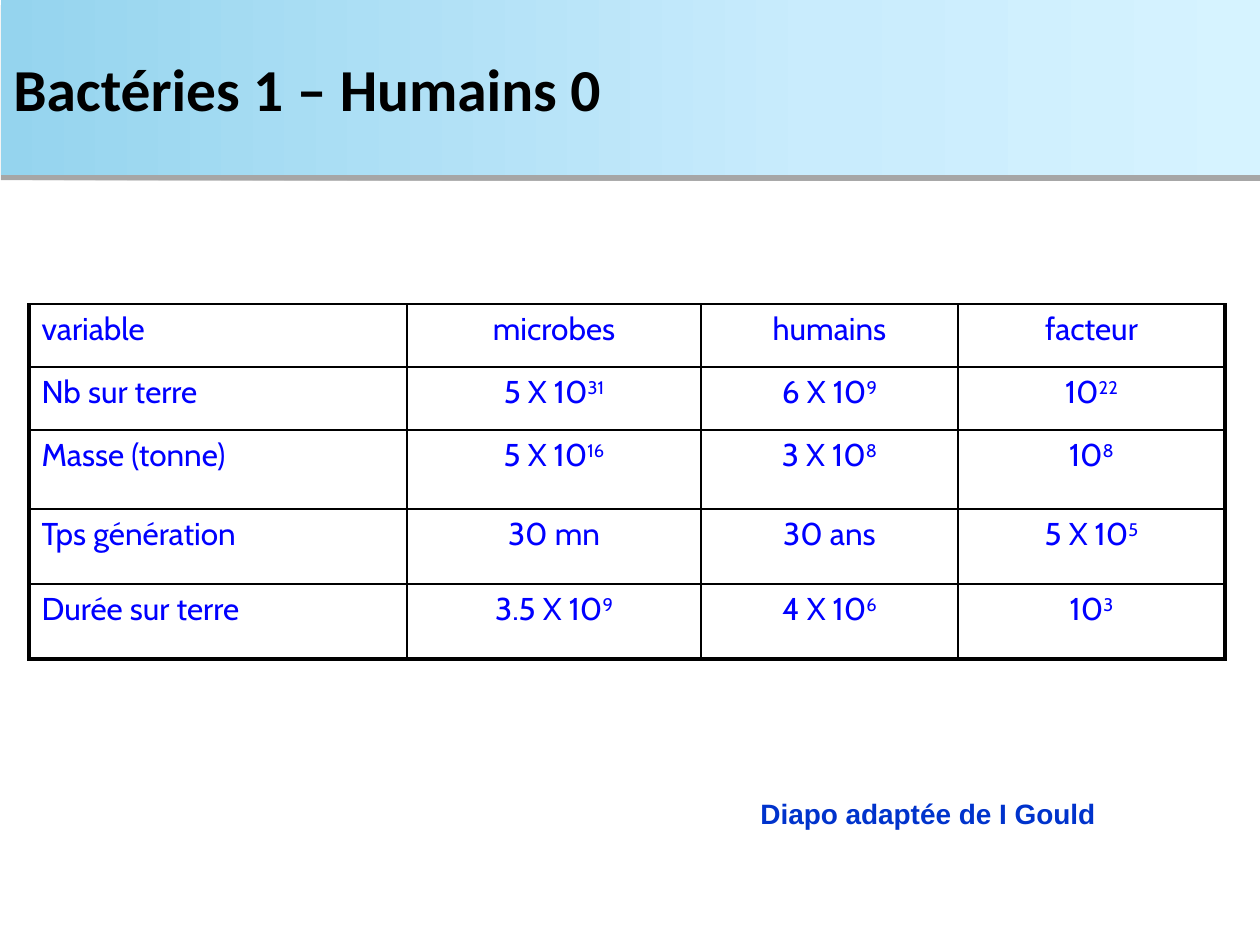
"""Build a slide with a title band, a table of microbes against humans, and a credit."""
from pptx import Presentation
from pptx.dml.color import RGBColor
from pptx.enum.shapes import MSO_SHAPE
from pptx.enum.text import MSO_ANCHOR, PP_ALIGN
from pptx.oxml import parse_xml
from pptx.oxml.ns import nsdecls
from pptx.util import Emu, Pt

SCALE = 914400 / 126
COLORS = {
    "band_start": "95D4EE", "band_mid": "C9ECFD", "band_end": "D6F3FF",
    "title": "000000", "shadow": "000000", "border": "000000",
    "cell": "0000FF", "credit": "0033CC",
}
COLS = [378, 294, 257, 267]
ROWS = [63, 63, 79, 75, 75]
DATA = [
    ["variable", "microbes", "humains", "facteur"],
    ["Nb sur terre", "5 X 10^31", "6 X 10^9", "10^22"],
    ["Masse (tonne)", "5 X 10^16", "3 X 10^8", "10^8"],
    ["Tps génération", "30 mn", "30 ans", "5 X 10^5"],
    ["Durée sur terre", "3.5 X 10^9", "4 X 10^6", "10^3"],
]


def px(n):
    return Emu(round(n * SCALE))


def add_run(p, text, font, size, color, bold=False):
    r = p.add_run()
    r.text = text
    r.font.name = font
    r.font.size = Pt(size)
    r.font.bold = bold
    r.font.color.rgb = RGBColor.from_string(COLORS[color])
    return r


def add_title(s, text):
    sp = s.shapes.add_shape(MSO_SHAPE.RECTANGLE, px(1), px(0), px(1259), px(175))
    stops = "".join(
        f'<a:gs pos="{pos * 1000}"><a:srgbClr val="{COLORS[name]}"/></a:gs>'
        for pos, name in [(0, "band_start"), (65, "band_mid"), (100, "band_end")])
    sp.line.fill.background()
    spPr = sp._element.spPr
    spPr.insert(2, parse_xml(
        f'<a:gradFill {nsdecls("a")} rotWithShape="1"><a:gsLst>{stops}</a:gsLst>'
        '<a:lin ang="0" scaled="0"/></a:gradFill>'))
    spPr.append(parse_xml(
        f'<a:effectLst {nsdecls("a")}><a:outerShdw blurRad="0" dist="{Pt(3)}" '
        f'dir="5400000" rotWithShape="0"><a:srgbClr val="{COLORS["shadow"]}">'
        '<a:alpha val="35000"/></a:srgbClr></a:outerShdw></a:effectLst>'))
    tf = sp.text_frame
    tf.word_wrap = True
    tf.vertical_anchor = MSO_ANCHOR.MIDDLE
    p = tf.paragraphs[0]
    p.alignment = PP_ALIGN.LEFT
    add_run(p, text, "Calibri", 34, "title", bold=True)


def set_borders(cell, outer):
    tcPr = cell._tc.get_or_add_tcPr()
    for side in "LRTB":
        width = Pt(2.25 if side in outer else 1)
        tcPr.append(parse_xml(
            f'<a:ln{side} {nsdecls("a")} w="{width}"><a:solidFill>'
            f'<a:srgbClr val="{COLORS["border"]}"/></a:solidFill></a:ln{side}>'))


def fill_cell(cell, text, centered):
    p = cell.text_frame.paragraphs[0]
    p.alignment = PP_ALIGN.CENTER if centered else PP_ALIGN.LEFT
    p.space_before = Pt(4)
    base, _, power = text.partition("^")
    add_run(p, base, "Cabin", 18, "cell")
    if power:
        r = add_run(p, power, "Cabin", 18, "cell")
        r._r.get_or_add_rPr().set("baseline", "30000")


def add_data_table(s):
    table = s.shapes.add_table(len(ROWS), len(COLS), px(29), px(304),
                               px(sum(COLS)), px(sum(ROWS))).table
    table.first_row = table.horz_banding = False
    for col, width in zip(table.columns, COLS):
        col.width = px(width)
    for row, height in zip(table.rows, ROWS):
        row.height = px(height)
    for i, values in enumerate(DATA):
        for j, text in enumerate(values):
            cell = table.cell(i, j)
            outer = (("L" if j == 0 else "") + ("R" if j == len(COLS) - 1 else "")
                     + ("B" if i == len(ROWS) - 1 else ""))
            set_borders(cell, outer)
            cell.fill.background()
            fill_cell(cell, text, centered=j > 0)


def add_credit(s, text):
    tf = s.shapes.add_textbox(px(748), px(790), px(512), px(47)).text_frame
    tf.word_wrap = True
    add_run(tf.paragraphs[0], text, "Arial", 16, "credit", bold=True)


def main():
    prs = Presentation()
    prs.slide_width, prs.slide_height = px(1260), px(945)
    s = prs.slides.add_slide(prs.slide_layouts[6])
    add_credit(s, "Diapo adaptée de I Gould")
    add_data_table(s)
    add_title(s, "Bactéries 1 – Humains 0")
    prs.save("out.pptx")


if __name__ == "__main__":
    main()
